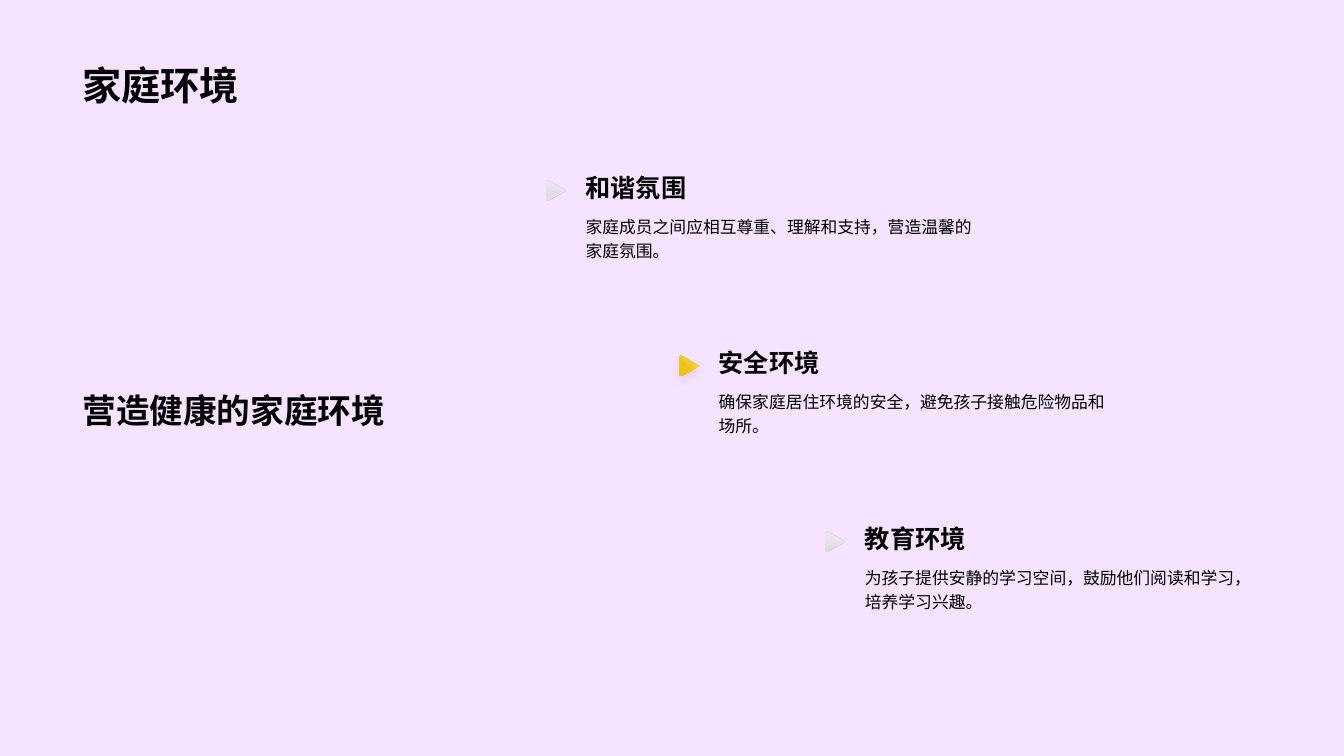
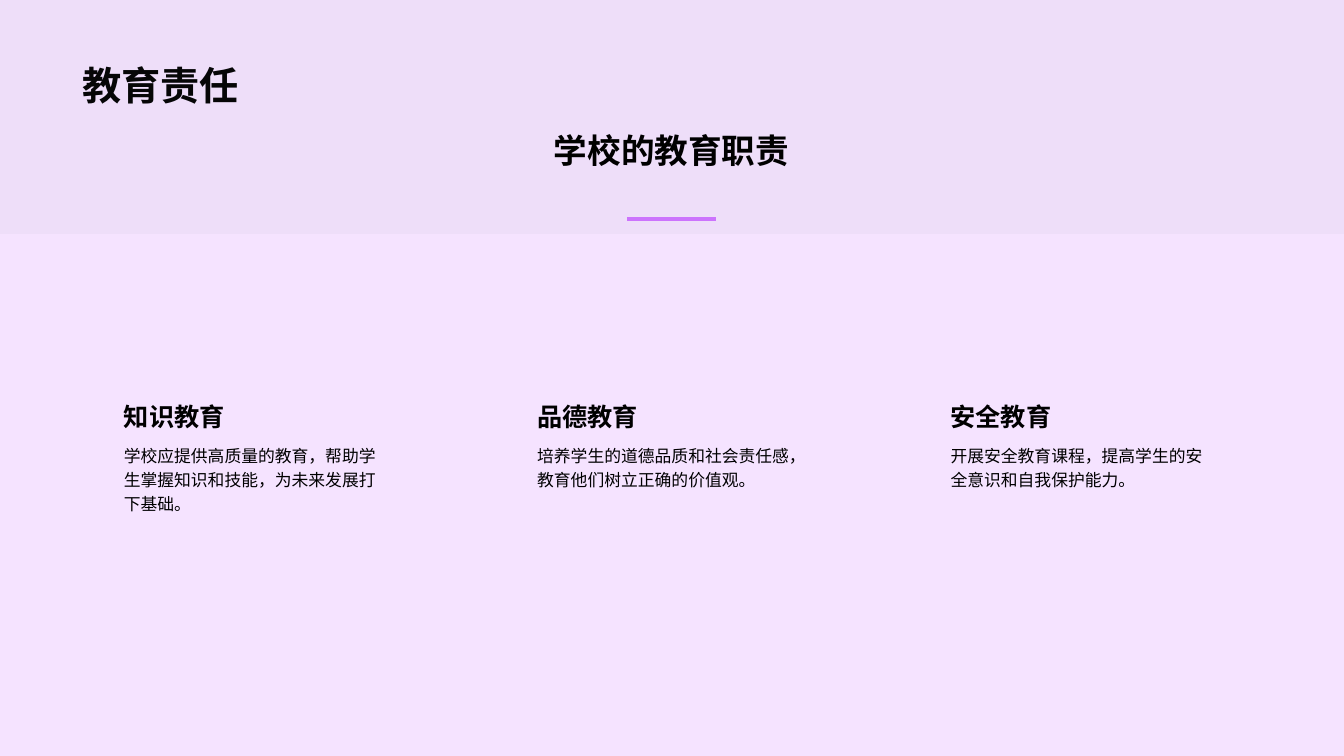
"""Two slides on the home environment and on the school's duties in education."""
from lxml.etree import SubElement
from pptx import Presentation
from pptx.dml.color import RGBColor
from pptx.enum.shapes import MSO_CONNECTOR as CONNECTOR, MSO_SHAPE as SHAPE
from pptx.enum.text import MSO_ANCHOR as ANCHOR, PP_ALIGN as ALIGN
from pptx.oxml import parse_xml
from pptx.oxml.ns import nsdecls, qn
from pptx.util import Pt

PX = 9144
WIDTH, HEIGHT = 1333, 750
MARGIN, CONTENT_W = 72, 1188
FONT = "Arial"

BLACK = RGBColor(0x00, 0x00, 0x00)
LILAC = RGBColor(0xF5, 0xE3, 0xFF)
VIOLET = RGBColor(0xCC, 0x73, 0xFD)
SLATE = RGBColor(0x77, 0x84, 0x95)
SILVER = RGBColor(0xD8, 0xD8, 0xD8)
PALE = RGBColor(0xF0, 0xF0, 0xF0)
STRAW = RGBColor(0xF5, 0xDC, 0x72)
GOLD = RGBColor(0xEF, 0xC5, 0x14)

GREY_FADE = (290, [(20, SILVER, 70), (100, PALE, 50)])
GOLD_FADE = (135, [(0, STRAW, 100), (60, GOLD, 100)])
ARROW = [(0, 1), (1, 0), (2, 0), (18, 9), (19, 10), (18, 11), (2, 20), (1, 20), (0, 19)]


class Deck:
    def __init__(self):
        self.prs = Presentation()
        self.prs.slide_width, self.prs.slide_height = WIDTH * PX, HEIGHT * PX
        self.s = None

    def slide(self, title):
        self.s = self.prs.slides.add_slide(self.prs.slide_layouts[6])
        fill = self.s.background.fill
        fill.solid()
        fill.fore_color.rgb = LILAC
        self.text(MARGIN, 14, CONTENT_W, 98, title, 28, anchor=ANCHOR.BOTTOM)

    def text(self, x, y, w, h, words, size, bold=True, anchor=ANCHOR.TOP,
             align=ALIGN.LEFT, spacing=None):
        tf = self.s.shapes.add_textbox(x * PX, y * PX, w * PX, h * PX).text_frame
        tf.word_wrap = True
        tf.vertical_anchor = anchor
        p = tf.paragraphs[0]
        p.text = words
        p.alignment = align
        p.line_spacing = spacing
        p.font.name, p.font.size, p.font.bold = FONT, Pt(size), bold
        p.font.color.rgb = BLACK

    def item(self, x, y, w, head_h, body_h, head, body):
        self.text(x, y, w, head_h, head, 18, anchor=ANCHOR.BOTTOM)
        self.text(x, y + head_h, w, body_h, body, 12, bold=False, spacing=1.2)

    def band(self, h, color, opacity):
        sp = self.s.shapes.add_shape(SHAPE.RECTANGLE, 0, 0, WIDTH * PX, h * PX)
        sp.shadow.inherit = False
        sp.line.fill.background()
        sp.fill.solid()
        sp.fill.fore_color.rgb = color
        clr = sp._element.spPr.find(".//" + qn("a:srgbClr"))
        SubElement(clr, qn("a:alpha"), val=str(opacity * 1000))

    def rule(self, x, y, w, color, weight):
        line = self.s.shapes.add_connector(
            CONNECTOR.STRAIGHT, x * PX, y * PX, (x + w) * PX, y * PX)
        line.line.color.rgb = color
        line.line.width = Pt(weight)
        SubElement(line._element.spPr, qn("a:effectLst"))

    def marker(self, x, y, fade, glow=None):
        builder = self.s.shapes.build_freeform(*ARROW[0], scale=PX)
        builder.add_line_segments(ARROW[1:], close=True)
        sp = builder.convert_to_shape(x * PX, y * PX)
        sp.shadow.inherit = False
        sp.line.fill.background()
        angle, stops = fade
        stop_xml = "".join(
            f'<a:gs pos="{pos * 1000}"><a:srgbClr val="{color}">'
            f'<a:alpha val="{opacity * 1000}"/></a:srgbClr></a:gs>'
            for pos, color, opacity in stops)
        spPr = sp._element.spPr
        spPr.find(qn("a:ln")).addprevious(parse_xml(
            f'<a:gradFill {nsdecls("a")} rotWithShape="1"><a:gsLst>{stop_xml}</a:gsLst>'
            f'<a:lin ang="{angle * 60000}" scaled="0"/></a:gradFill>'))
        if glow:
            spPr.find(qn("a:effectLst")).append(parse_xml(
                f'<a:outerShdw {nsdecls("a")} blurRad="{Pt(6)}" dist="{Pt(4)}" dir="5400000">'
                f'<a:srgbClr val="{glow}"><a:alpha val="20000"/></a:srgbClr></a:outerShdw>'))


def home_slide(deck):
    deck.slide("家庭环境")
    deck.text(MARGIN, 293, 470, 139, "营造健康的家庭环境", 24, anchor=ANCHOR.BOTTOM)
    steps = [
        (571, "和谐氛围", "家庭成员之间应相互尊重、理解和支持，营造温馨的家庭氛围。", GREY_FADE, None),
        (703, "安全环境", "确保家庭居住环境的安全，避免孩子接触危险物品和场所。", GOLD_FADE, VIOLET),
        (848, "教育环境", "为孩子提供安静的学习空间，鼓励他们阅读和学习，培养学习兴趣。", GREY_FADE, None),
    ]
    for i, (x, head, body, fade, glow) in enumerate(steps):
        y = 136 + 174 * i
        deck.item(x, y, 404, 70, 79, head, body)
        deck.marker(x - 29, y + 43, fade, glow)


def school_slide(deck):
    deck.slide("教育责任")
    deck.band(232, SLATE, 5)
    deck.rule(622, 217, 88, VIOLET, 3)
    deck.text(MARGIN, 124, CONTENT_W, 50, "学校的教育职责", 24, align=ALIGN.CENTER)
    duties = [
        ("知识教育", "学校应提供高质量的教育，帮助学生掌握知识和技能，为未来发展打下基础。"),
        ("品德教育", "培养学生的道德品质和社会责任感，教育他们树立正确的价值观。"),
        ("安全教育", "开展安全教育课程，提高学生的安全意识和自我保护能力。"),
    ]
    for i, (head, body) in enumerate(duties):
        deck.item(113 + 410 * i, 355, 286, 78, 118, head, body)


def main():
    deck = Deck()
    home_slide(deck)
    school_slide(deck)
    deck.prs.save("out.pptx")


if __name__ == "__main__":
    main()
